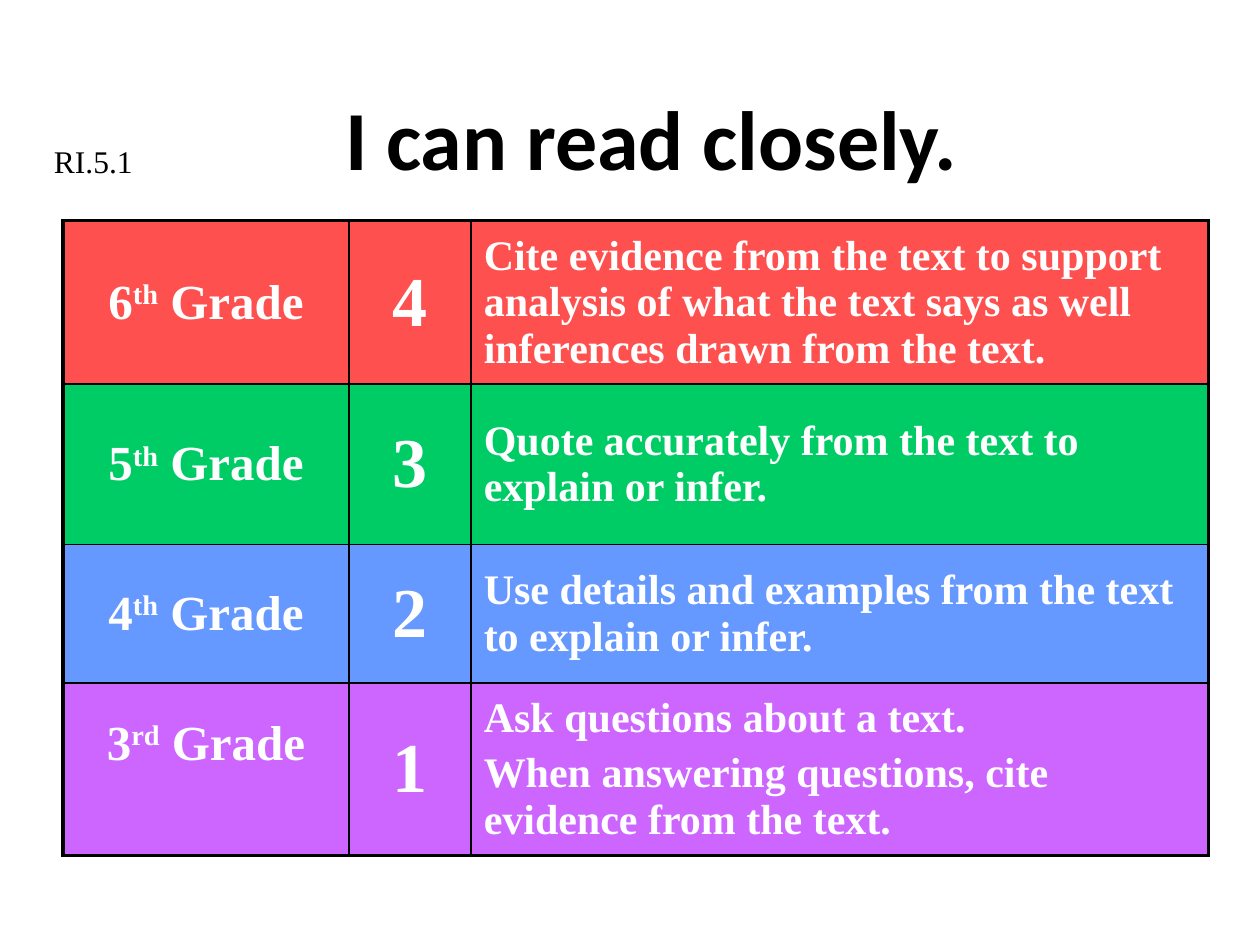
from lxml import etree
from pptx import Presentation
from pptx import util as u
from pptx.dml.color import RGBColor
from pptx.enum import text as t
from pptx.oxml.ns import qn

SERIF = "Times New Roman"
MID = t.MSO_ANCHOR.MIDDLE
CENTER = t.PP_ALIGN.CENTER


def paint(hex):
    return RGBColor.from_string(hex)


def write(frame, paras, size, font=SERIF, color="000000", bold=False,
          align=t.PP_ALIGN.LEFT, gap=0):
    """Fill a frame; a paragraph is a list of (text, raise in percent)."""
    for i, runs in enumerate(paras):
        para = frame.add_paragraph() if i else frame.paragraphs[0]
        para.alignment = align
        para.space_before = u.Pt(gap if i else 0)
        for words, lift in runs:
            run = para.add_run()
            run.text = words
            run.font.size = u.Pt(size)
            run.font.name = font
            run.font.bold = bold
            run.font.color.rgb = paint(color)
            if lift:
                run._r.get_or_add_rPr().set("baseline", str(lift * 1000))


def edge(cell, side, width):
    line = etree.SubElement(cell._tc.get_or_add_tcPr(), qn("a:ln" + side),
                            w=str(u.Pt(width)))
    fill = etree.SubElement(line, qn("a:solidFill"))
    etree.SubElement(fill, qn("a:srgbClr"), val="000000")


class Deck:
    def __init__(self, wide, high):
        self.file = Presentation()
        self.file.slide_width = u.Inches(wide)
        self.file.slide_height = u.Inches(high)
        self.slide = self.file.slides.add_slide(self.file.slide_layouts[6])

    def label(self, box, words, size, anchor=t.MSO_ANCHOR.TOP, **style):
        frame = self.slide.shapes.add_textbox(*map(u.Inches, box)).text_frame
        frame.word_wrap = True
        frame.vertical_anchor = anchor
        write(frame, [[(words, 0)]], size, **style)

    def grid(self, left, top, cols, rows):
        shape = self.slide.shapes.add_table(
            len(rows), len(cols), u.Inches(left), u.Inches(top),
            u.Inches(sum(cols)), u.Inches(sum(rows)))
        table = shape.table
        table.first_row = table.horz_banding = False
        for col, wide in zip(table.columns, cols):
            col.width = u.Inches(wide)
        for row, high in zip(table.rows, rows):
            row.height = u.Inches(high)
        return table

    def cell(self, table, r, c, fill, paras, size, **style):
        cell = table.cell(r, c)
        last = len(table.columns) - 1
        base = len(table.rows) - 1
        # Heavy frame, thin inner lines
        edge(cell, "L", 1 if c else 2.25)
        edge(cell, "R", 2.25 if c == last else 1)
        edge(cell, "T", 1 if r else 2.25)
        edge(cell, "B", 1.5 if r in (0, base) else 1)
        cell.fill.solid()
        cell.fill.fore_color.rgb = paint(fill)
        cell.vertical_anchor = MID
        write(cell.text_frame, paras, size, color="FFFFFF", bold=True, **style)
        return cell


LEVELS = [
    ("6", "th", "4", "FF5050",
     ["Cite evidence from the text to support analysis of what the text "
      "says as well inferences drawn from the text."]),
    ("5", "th", "3", "00CC66",
     ["Quote accurately from the text to explain or infer."]),
    ("4", "th", "2", "6699FF",
     ["Use details and examples from the text to explain or infer."]),
    ("3", "rd", "1", "CC66FF",
     ["Ask questions about a text.",
      "When answering questions, cite evidence from the text."]),
]


def main():
    deck = Deck(10, 7.5)

    # Heading and standard code
    deck.label((0.92, 0.25, 8.5, 1.67), "I can read closely.", 48, anchor=MID,
               font="Calibri", bold=True, align=CENTER)
    deck.label((0.33, 1.08, 1.42, 0.4), "RI.5.1", 18)

    # Scale of grades, scores and skills
    table = deck.grid(0.5, 1.75, [2.27, 0.97, 5.85], [1.3, 1.27, 1.1, 1.37])
    for r, (grade, suffix, score, fill, skills) in enumerate(LEVELS):
        name = [(grade, 0), (suffix, 30), (" Grade", 0)]
        first = deck.cell(table, r, 0, fill, [name], 28, align=CENTER)
        deck.cell(table, r, 1, fill, [[(score, 0)]], 40, align=CENTER)
        deck.cell(table, r, 2, fill, [[(s, 0)] for s in skills], 24, gap=5)
    # The last grade sits above the middle of its row
    first.margin_bottom = u.Inches(0.45)

    deck.file.save("out.pptx")


if __name__ == "__main__":
    main()
